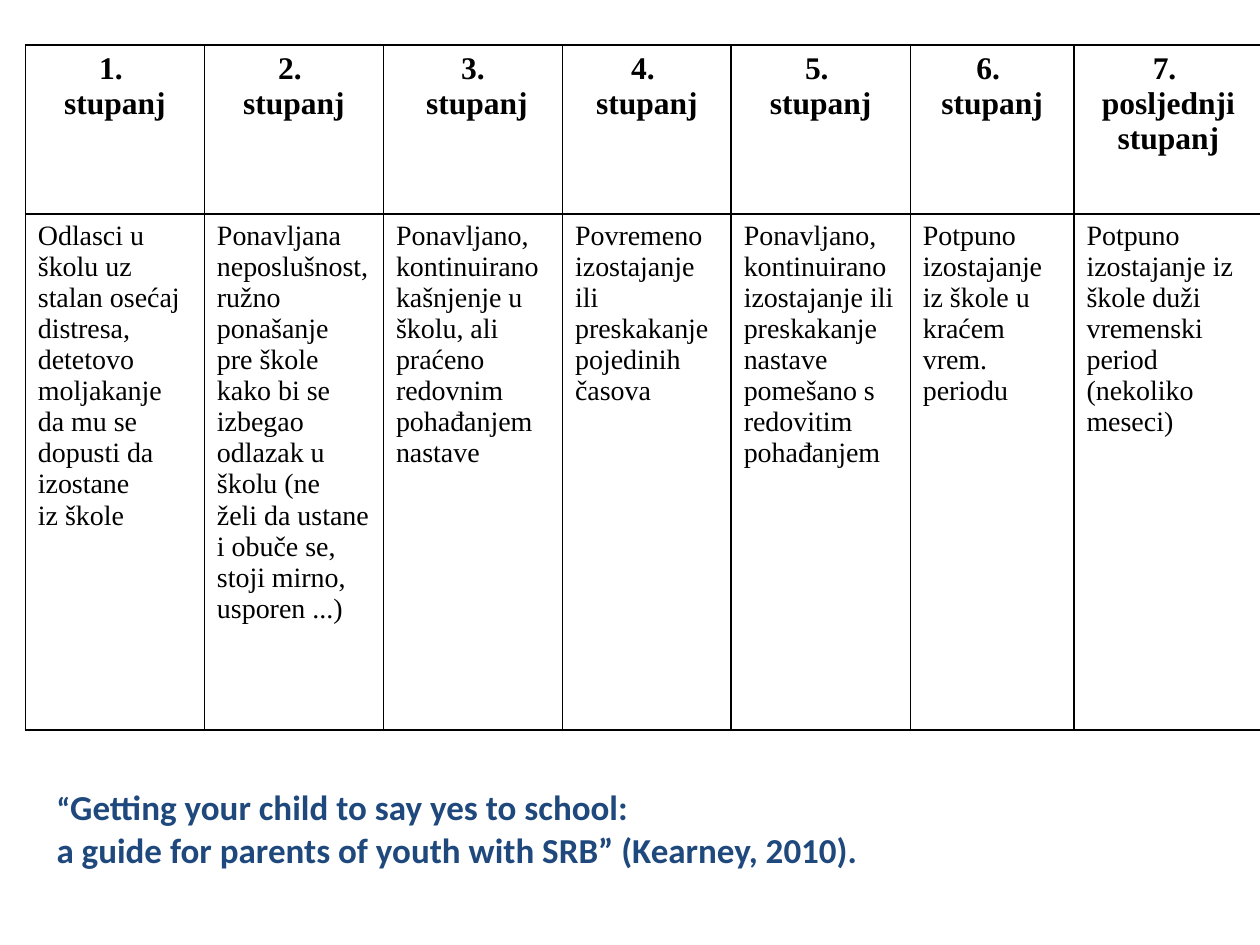
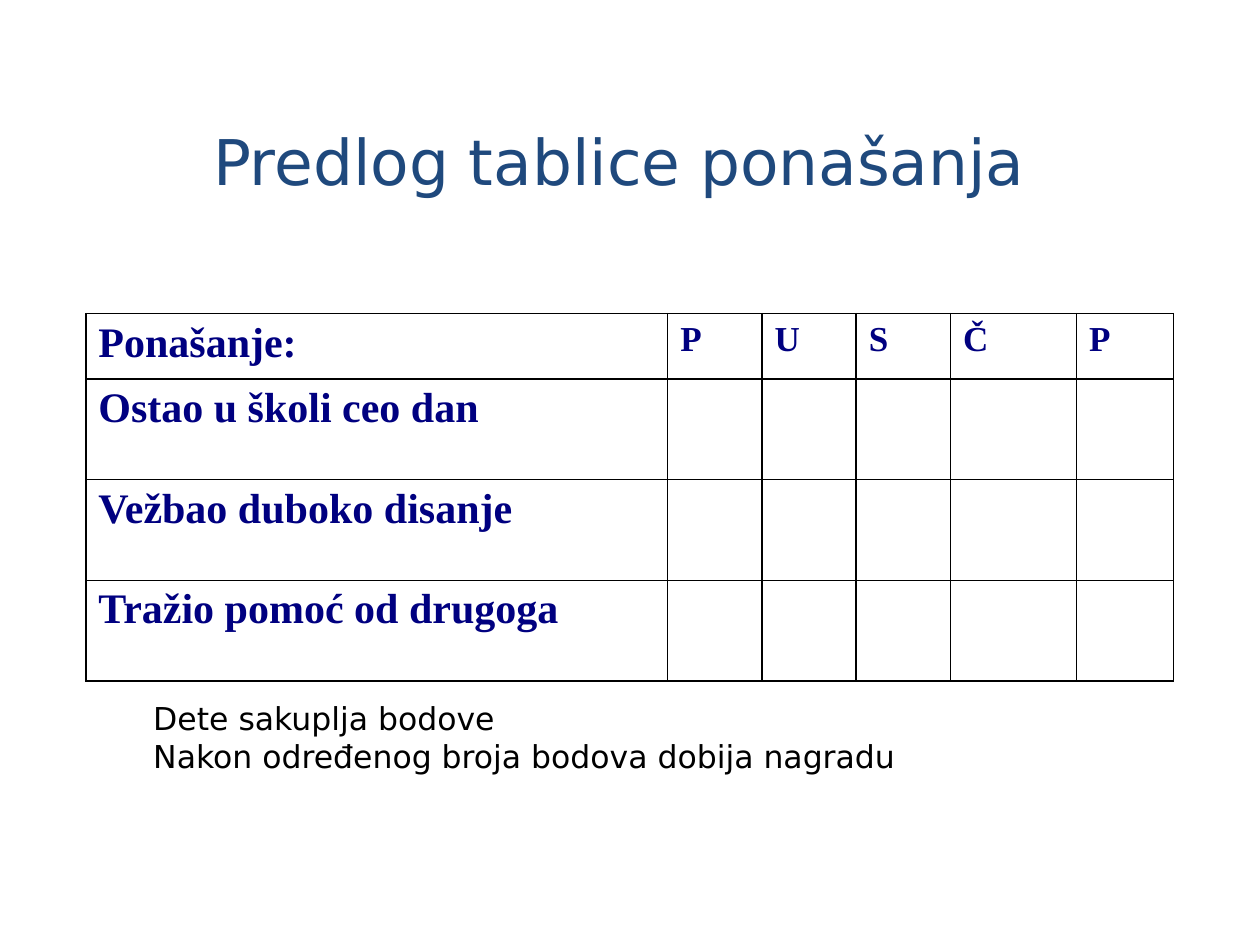
from dataclasses import dataclass

from lxml import etree
from pptx import Presentation
from pptx.dml.color import RGBColor
from pptx.enum.text import MSO_ANCHOR, PP_ALIGN
from pptx.oxml.ns import qn
from pptx.util import Cm, Pt

LEFT, CENTER = PP_ALIGN.LEFT, PP_ALIGN.CENTER
TOP, MIDDLE = MSO_ANCHOR.TOP, MSO_ANCHOR.MIDDLE
TITLE_ONLY, BLANK = 5, 6


@dataclass(frozen=True)
class TextStyle:
    font: str
    size: int
    color: str
    bold: bool = False
    align: PP_ALIGN = LEFT


@dataclass(frozen=True)
class Theme:
    border: str = "000000"
    border_width: int = 1
    title: TextStyle = TextStyle("DejaVu Sans", 36, "1F497D")
    note: TextStyle = TextStyle("DejaVu Sans", 18, "000000")
    citation: TextStyle = TextStyle("Calibri", 20, "1F497D", True)
    quote_mark: TextStyle = TextStyle("Calibri", 18, "1F497D", True)
    stage: TextStyle = TextStyle("Times New Roman", 18, "000000", True, CENTER)
    description: TextStyle = TextStyle("Times New Roman", 16, "000000")
    behaviour: TextStyle = TextStyle("Times New Roman", 24, "000080", True)
    weekday: TextStyle = TextStyle("Times New Roman", 20, "000080", True)


@dataclass(frozen=True)
class Box:
    """Position and size in centimetres."""
    left: float
    top: float
    width: float
    height: float


@dataclass(frozen=True)
class CellText:
    text: str
    style: TextStyle


THEME = Theme()

# Stages of school refusal: heading and description
STAGES = [
    ("1. \nstupanj",
     "Odlasci u školu uz\nstalan osećaj distresa,\ndetetovo\n"
     "moljakanje da mu se dopusti da izostane\niz škole"),
    ("2. \nstupanj",
     "Ponavljana neposlušnost, ružno ponašanje pre škole kako bi se izbegao\n"
     "odlazak u\nškolu (ne\nželi da ustane i obuče se, stoji mirno, usporen ...)"),
    ("3.\n stupanj",
     "Ponavljano, kontinuirano\nkašnjenje u školu, ali\n"
     "praćeno redovnim\npohađanjem nastave"),
    ("4. \nstupanj",
     "Povremeno izostajanje ili preskakanje\npojedinih časova"),
    ("5. \nstupanj",
     "Ponavljano, kontinuirano izostajanje ili preskakanje nastave "
     "pomešano s redovitim\npohađanjem"),
    ("6. \nstupanj",
     "Potpuno izostajanje iz škole u kraćem vrem. periodu"),
    ("7. \nposljednji\nstupanj",
     "Potpuno izostajanje iz škole duži vremenski period\n(nekoliko meseci)"),
]
STAGE_WIDTHS = [3.61, 3.61, 3.61, 3.4, 3.61, 3.3, 3.81]
STAGE_HEIGHTS = [3.4, 10.41]

# Behaviour chart: one row per behaviour, one column per school day
WEEKDAYS = "PUSČP"
BEHAVIOURS = ["Ostao u školi ceo dan", "Vežbao duboko disanje",
              "Tražio pomoć od drugoga"]
CHART_WIDTHS = [11.73, 1.9, 1.9, 1.9, 2.54, 1.96]
CHART_HEIGHTS = [1.32] + [2.03] * len(BEHAVIOURS)


def format_run(run, style: TextStyle) -> None:
    run.font.name = style.font
    run.font.size = Pt(style.size)
    run.font.bold = style.bold
    run.font.color.rgb = RGBColor.from_string(style.color)


def write(frame, text: str, style: TextStyle) -> None:
    frame.text = text
    for paragraph in frame.paragraphs:
        paragraph.alignment = style.align
        for run in paragraph.runs:
            format_run(run, style)


def place(shape, box: Box) -> None:
    shape.left, shape.top = Cm(box.left), Cm(box.top)
    shape.width, shape.height = Cm(box.width), Cm(box.height)


def add_text(slide, box: Box, text: str, style: TextStyle):
    shape = slide.shapes.add_textbox(0, 0, 0, 0)
    place(shape, box)
    shape.text_frame.word_wrap = True
    write(shape.text_frame, text, style)
    return shape.text_frame


def add_borders(cell) -> None:
    properties = cell._tc.get_or_add_tcPr()
    for side in ("a:lnL", "a:lnR", "a:lnT", "a:lnB"):
        line = etree.SubElement(properties, qn(side),
                                w=str(Pt(THEME.border_width)))
        fill = etree.SubElement(line, qn("a:solidFill"))
        etree.SubElement(fill, qn("a:srgbClr"), val=THEME.border)


def add_grid(slide, left: float, top: float, widths: list[float],
             heights: list[float], rows: list[list[CellText]]) -> None:
    """Draw an unfilled, fully ruled table; short rows leave cells empty."""
    table = slide.shapes.add_table(
        len(heights), len(widths), Cm(left), Cm(top),
        Cm(sum(widths)), Cm(sum(heights))).table
    table.first_row = table.horz_banding = False
    for column, width in zip(table.columns, widths):
        column.width = Cm(width)
    for row, height in zip(table.rows, heights):
        row.height = Cm(height)
    for cell in table.iter_cells():
        add_borders(cell)
        cell.fill.background()
        cell.vertical_anchor = TOP
    for row, entries in zip(table.rows, rows):
        for cell, entry in zip(row.cells, entries):
            write(cell.text_frame, entry.text, entry.style)


def build_stages(prs) -> None:
    slide = prs.slides.add_slide(prs.slide_layouts[BLANK])
    headings = [CellText(heading, THEME.stage) for heading, _ in STAGES]
    descriptions = [CellText(text, THEME.description) for _, text in STAGES]
    add_grid(slide, 0.51, 0.91, STAGE_WIDTHS, STAGE_HEIGHTS,
             [headings, descriptions])

    # Citation, with a slightly smaller opening quotation mark
    citation = add_text(
        slide, Box(0.89, 15.72, 24, 1.96),
        "“\na guide for parents of youth with SRB” (Kearney, 2010).",
        THEME.citation)
    first_line = citation.paragraphs[0]
    format_run(first_line.runs[0], THEME.quote_mark)
    book_title = first_line.add_run()
    book_title.text = "Getting your child to say yes to school:"
    format_run(book_title, THEME.citation)


def build_behaviour_chart(prs) -> None:
    slide = prs.slides.add_slide(prs.slide_layouts[TITLE_ONLY])
    title = slide.shapes.title
    place(title, Box(4.04, 2.34, 17.68, 1.78))
    title.text_frame.vertical_anchor = MIDDLE
    write(title.text_frame, "Predlog tablice ponašanja", THEME.title)

    header = [CellText("Ponašanje:", THEME.behaviour)]
    header += [CellText(day, THEME.weekday) for day in WEEKDAYS]
    rows = [[CellText(name, THEME.behaviour)] for name in BEHAVIOURS]
    add_grid(slide, 1.73, 6.32, CHART_WIDTHS, CHART_HEIGHTS, [header] + rows)

    # Reward rule
    add_text(slide, Box(2.84, 13.97, 15.72, 1.78),
             "Dete sakuplja bodove\n"
             "Nakon određenog broja bodova dobija nagradu", THEME.note)


def main() -> None:
    prs = Presentation()
    prs.slide_width, prs.slide_height = Cm(25.4), Cm(19.05)
    build_stages(prs)
    build_behaviour_chart(prs)
    prs.save("out.pptx")


if __name__ == "__main__":
    main()
